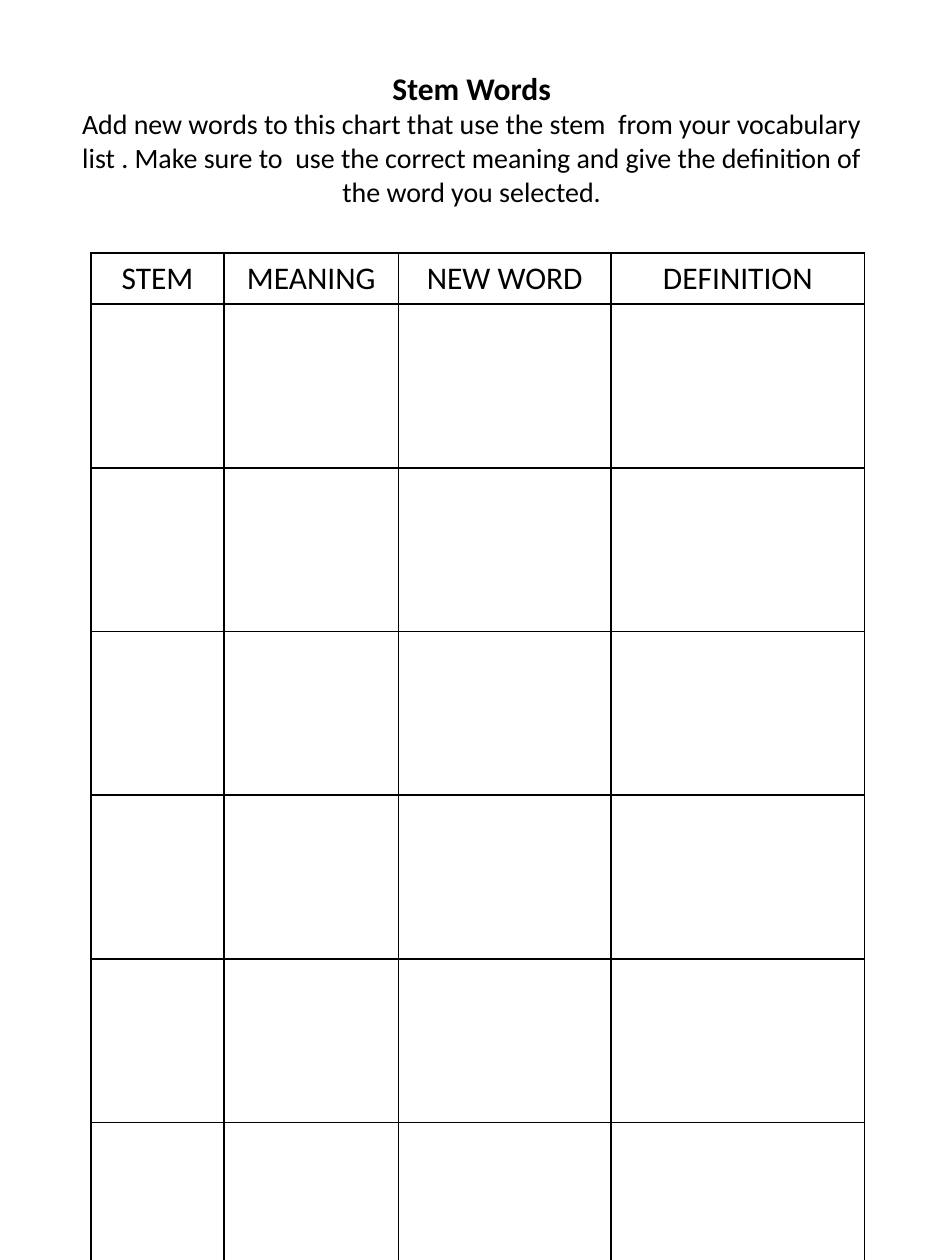
from lxml import etree
from pptx import Presentation
from pptx.dml.color import RGBColor
from pptx.enum.text import MSO_AUTO_SIZE, PP_ALIGN
from pptx.oxml.ns import qn
from pptx.util import Cm, Pt

BLACK = RGBColor(0x00, 0x00, 0x00)
FONT = "Calibri"

TITLE = "Stem Words"
INSTRUCTIONS = (
    "Add new words to this chart that use the stem  from your vocabulary list . "
    "Make sure to  use the correct meaning and give the definition of "
    "the word you selected."
)
COLUMNS = {"STEM": 2.69, "MEANING": 3.51, "NEW WORD": 4.29, "DEFINITION": 5.11}
BLANK_ROWS = 6
HEADER_HEIGHT, ROW_HEIGHT = 1.03, 3.3


def style_paragraph(paragraph, size, bold=False):
    paragraph.alignment = PP_ALIGN.CENTER
    font = paragraph.font
    font.name, font.size, font.bold = FONT, Pt(size), bold
    font.color.rgb = BLACK


def add_border(cell):
    properties = cell._tc.get_or_add_tcPr()
    for position, side in enumerate(("a:lnL", "a:lnR", "a:lnT", "a:lnB")):
        line = etree.Element(qn(side), w=str(Pt(1)))
        fill = etree.SubElement(line, qn("a:solidFill"))
        etree.SubElement(fill, qn("a:srgbClr"), val=str(BLACK))
        properties.insert(position, line)


def add_heading(slide, left, top, width, height):
    box = slide.shapes.add_textbox(Cm(left), Cm(top), Cm(width), Cm(height))
    frame = box.text_frame
    frame.word_wrap = True
    frame.auto_size = MSO_AUTO_SIZE.SHAPE_TO_FIT_TEXT
    frame.text = f"{TITLE}\n{INSTRUCTIONS}"
    title, instructions = frame.paragraphs
    style_paragraph(title, 18, bold=True)
    style_paragraph(instructions, 16)


def add_word_table(slide, left, top):
    width = sum(COLUMNS.values())
    height = HEADER_HEIGHT + BLANK_ROWS * ROW_HEIGHT
    table = slide.shapes.add_table(
        BLANK_ROWS + 1, len(COLUMNS), Cm(left), Cm(top), Cm(width), Cm(height)
    ).table
    table.first_row = table.horz_banding = False

    for column, column_width in zip(table.columns, COLUMNS.values()):
        column.width = Cm(column_width)
    for index, row in enumerate(table.rows):
        row.height = Cm(ROW_HEIGHT if index else HEADER_HEIGHT)

    for cell in table.iter_cells():
        cell.fill.background()
        add_border(cell)
        style_paragraph(cell.text_frame.paragraphs[0], 18)
    for index, label in enumerate(COLUMNS):
        table.cell(0, index).text_frame.paragraphs[0].add_run().text = label


def main():
    presentation = Presentation()
    presentation.slide_width, presentation.slide_height = Cm(19.05), Cm(25.4)
    slide = presentation.slides.add_slide(presentation.slide_layouts[6])

    # Title and instructions
    add_heading(slide, 1.14, 1.27, 16.74, 3.07)
    # Worksheet grid, running past the foot of the page
    add_word_table(slide, 1.83, 5.1)

    presentation.save("out.pptx")


if __name__ == "__main__":
    main()
